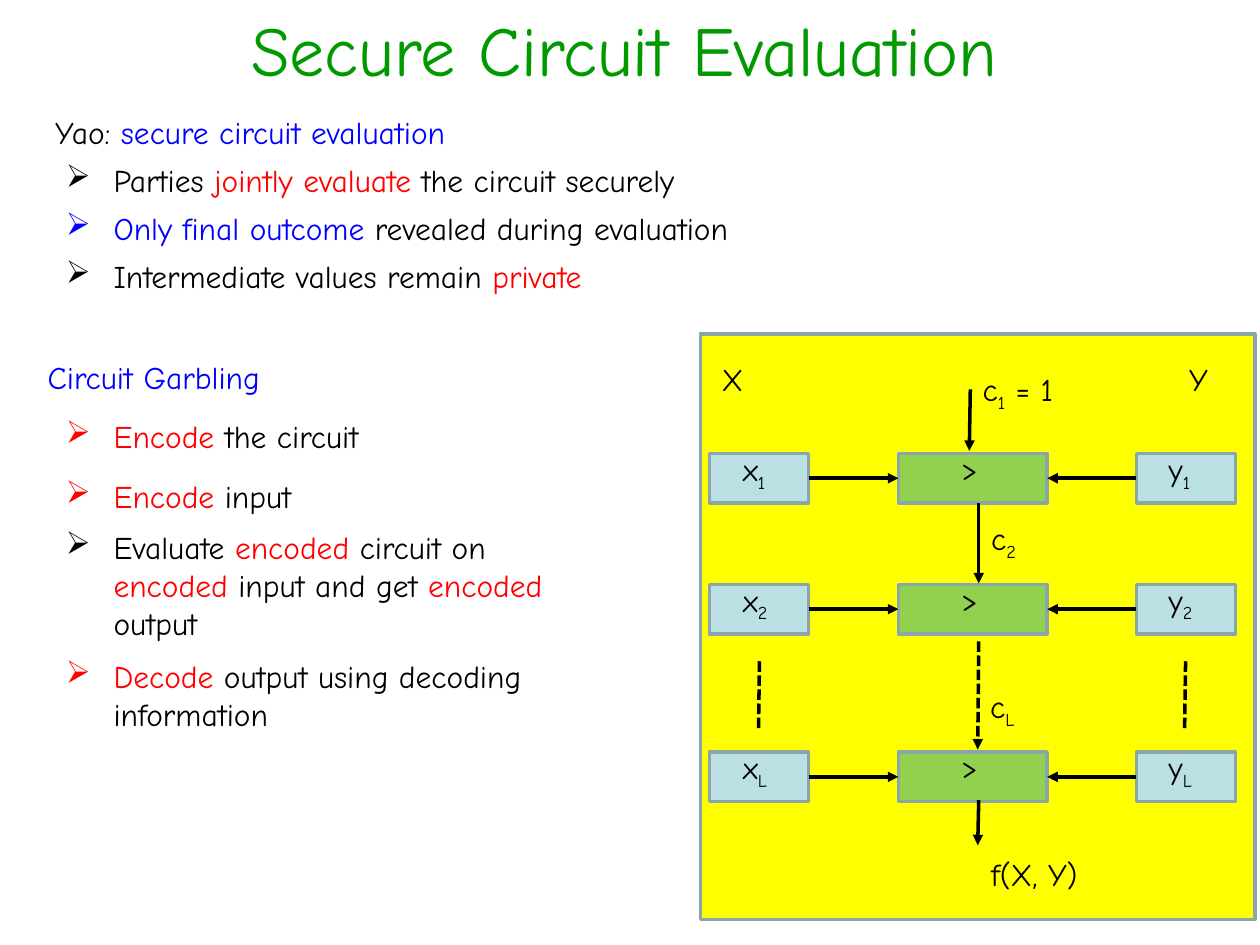
from dataclasses import dataclass

from lxml.etree import SubElement
from pptx import Presentation
from pptx.dml.color import RGBColor as RGB
from pptx.enum.dml import MSO_LINE
from pptx.enum.shapes import MSO_CONNECTOR as CONN, MSO_SHAPE as SHAPE
from pptx.enum.text import MSO_ANCHOR as ANCHOR, MSO_AUTO_SIZE as FIT, PP_ALIGN as ALIGN
from pptx.oxml.ns import qn
from pptx.util import Cm, Pt


@dataclass(frozen=True)
class Theme:
    """Fonts, sizes and colours of the slide."""
    font: str = "Comic Neue"
    title_size: int = 40
    body_size: int = 18
    line_width: int = 2
    title: str = "009900"
    black: str = "000000"
    blue: str = "0000FF"
    red: str = "FF0000"
    panel: str = "FFFF00"
    wire: str = "BBE0E3"
    gate: str = "92D050"
    border: str = "8AA6A8"


T = Theme()


def style_run(r, color, size=T.body_size):
    """Apply the theme font, a size and a colour to a run."""
    r.font.name = T.font
    r.font.size = Pt(size)
    r.font.color.rgb = RGB.from_string(color)


def add_text(s, x, y, w, h, parts):
    """Add a text box of (text, colour) parts and return its paragraph."""
    tf = s.shapes.add_textbox(Cm(x), Cm(y), Cm(w), Cm(h)).text_frame
    tf.word_wrap = True
    p = tf.paragraphs[0]
    for text, color in parts:
        r = p.add_run()
        r.text = text
        style_run(r, color)
    return p


def add_label(s, x, y, w, base, sub="", rest=""):
    """Add a circuit label with an optional subscript."""
    parts = [(t, T.black) for t in (base, sub, rest) if t]
    p = add_text(s, x, y, w, 1.02, parts)
    if sub:
        p.runs[1].font._element.set("baseline", "-25000")


def add_rect(s, x, y, w, h, fill):
    """Add a bordered rectangle."""
    sp = s.shapes.add_shape(SHAPE.RECTANGLE, Cm(x), Cm(y), Cm(w), Cm(h))
    sp.shadow.inherit = False
    sp.fill.solid()
    sp.fill.fore_color.rgb = RGB.from_string(fill)
    sp.line.color.rgb = RGB.from_string(T.border)
    sp.line.width = Pt(T.line_width)
    return sp


def add_line(s, x1, y1, x2, y2, arrow=True, dashed=False):
    """Add a straight line, by default with an arrowhead at its end."""
    c = s.shapes.add_connector(CONN.STRAIGHT, Cm(x1), Cm(y1), Cm(x2), Cm(y2))
    c.line.color.rgb = RGB.from_string(T.black)
    c.line.width = Pt(T.line_width)
    if dashed:
        c.line.dash_style = MSO_LINE.SQUARE_DOT
    if arrow:
        SubElement(c.line._get_or_add_ln(), qn("a:tailEnd"), type="triangle")
    SubElement(c._element.spPr, qn("a:effectLst"))
    return c


def join(s, source, source_side, target, target_side):
    """Connect two rectangles with an arrow."""
    c = add_line(s, 0, 0, 1, 1)
    c.begin_connect(source, source_side)
    c.end_connect(target, target_side)


def add_title(s, x, y, w, h, text):
    """Place and format the title placeholder."""
    sp = s.shapes.title
    sp.left, sp.top, sp.width, sp.height = Cm(x), Cm(y), Cm(w), Cm(h)
    tf = sp.text_frame
    tf.text = text
    tf.auto_size = FIT.NONE
    tf.vertical_anchor = ANCHOR.MIDDLE
    p = tf.paragraphs[0]
    p.alignment = ALIGN.CENTER
    style_run(p.runs[0], T.title, T.title_size)


def add_section(s, x, y, w, heading, indent, items):
    """Add a heading with bulleted (top, width, height, parts) items below it."""
    add_text(s, x, y, w, 1.02, heading)
    for top, width, height, parts in items:
        p = add_text(s, x + indent, y + top, width, height, parts)
        pPr = p._p.get_or_add_pPr()
        pPr.set("marL", str(Cm(0.96)))
        pPr.set("indent", str(-Cm(0.96)))
        SubElement(pPr, qn("a:buChar"), char="➢")


def add_stage(s, x, y, index):
    """Add one comparison stage: two inputs feeding a gate."""
    left = add_rect(s, x + 0.18, y, 2, 1, T.wire)
    gate = add_rect(s, x + 3.99, y, 3, 1, T.gate)
    right = add_rect(s, x + 8.79, y, 2, 1, T.wire)
    join(s, left, 3, gate, 1)
    join(s, right, 1, gate, 3)
    add_label(s, x + 0.61, y - 0.2, 1.37, "x", index)
    add_label(s, x + 5, y - 0.22, 1.98, ">")
    add_label(s, x + 9.19, y - 0.2, 1.37, "y", index)


def add_circuit(s, x, y, w, h):
    """Add the comparison circuit panel."""
    add_rect(s, x, y, w, h, T.panel)
    for top, index in ((2.41, "1"), (5.05, "2"), (8.43, "L")):
        add_stage(s, x, y + top, index)
    for x1, y1, x2, y2, arrow, dashed in (
        (5.44, 1.12, 5.42, 2.36, True, False),
        (5.61, 3.4, 5.61, 5.03, True, False),
        (5.61, 6.2, 5.59, 8.38, True, True),
        (5.61, 9.4, 5.59, 10.31, True, False),
        (1.19, 6.6, 1.17, 8, False, True),
        (9.78, 6.6, 9.76, 8, False, True),
    ):
        add_line(s, x + x1, y + y1, x + x2, y + y2, arrow, dashed)
    for left, top, width, *text in (
        (0.18, 0.41, 1.37, "X"),
        (9.6, 0.41, 1.37, "Y"),
        (5.44, 0.61, 2.57, "c", "1", " = 1"),
        (5.61, 3.61, 1.3, "c", "2"),
        (5.59, 6.99, 1.37, "c", "L"),
        (5.61, 10.39, 3.99, "f(X, Y)"),
    ):
        add_label(s, x + left, y + top, width, *text)


def main():
    """Build the slide and save it."""
    prs = Presentation()
    prs.slide_width, prs.slide_height = Cm(25.4), Cm(19.05)
    s = prs.slides.add_slide(prs.slide_layouts[5])
    add_title(s, 0.2, 0.03, 24.76, 1.9, "Secure Circuit Evaluation")
    add_circuit(s, 14.12, 6.73, 11.18, 11.81)
    add_section(
        s, 0.86, 2.16, 10.65,
        [("Yao: ", T.black), ("secure circuit evaluation", T.blue)], 0.22,
        [
            (0.96, 21.23, 0.84, [("Parties ", T.black), ("jointly evaluate ", T.red),
                                 ("the circuit securely", T.black)]),
            (1.93, 21.23, 0.84, [("Only final outcome ", T.blue),
                                 ("revealed during evaluation", T.black)]),
            (2.9, 23.42, 0.84, [("Intermediate values remain ", T.black),
                                ("private", T.red)]),
        ])
    add_section(
        s, 0.71, 7.09, 5.56, [("Circuit Garbling", T.blue)], 0.37,
        [
            (1.19, 8.84, 1.02, [("Encode", T.red), (" the circuit", T.black)]),
            (2.41, 8.84, 1.02, [("Encode", T.red), (" input", T.black)]),
            (3.43, 11.43, 2.57, [("Evaluate ", T.black), ("encoded", T.red),
                                 (" circuit on ", T.black), ("encoded", T.red),
                                 (" input and get ", T.black), ("encoded", T.red),
                                 (" output", T.black)]),
            (6.04, 10.57, 1.8, [("Decode", T.red),
                                (" output using decoding information", T.black)]),
        ])
    prs.save("out.pptx")


if __name__ == "__main__":
    main()
